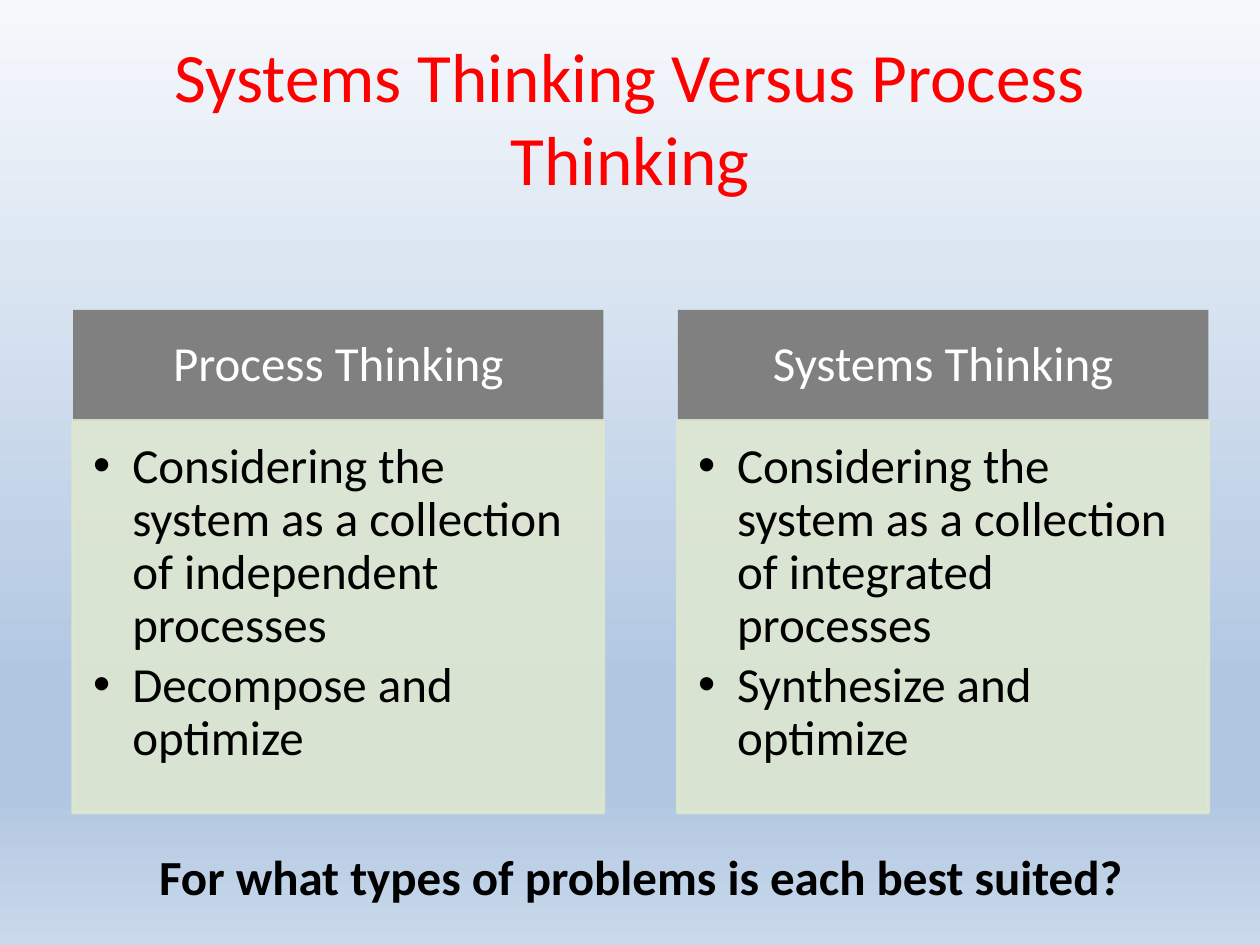
from pptx import Presentation
from pptx.dml.color import RGBColor
from pptx.enum.shapes import MSO_SHAPE
from pptx.enum.text import MSO_ANCHOR, MSO_AUTO_SIZE, PP_ALIGN
from pptx.oxml.ns import qn
from pptx.util import Inches, Pt
from lxml.etree import SubElement

COLORS = {"title": "FF0000", "header": "808080", "header_text": "FFFFFF",
          "body": "DEE7D1", "text": "000000"}
BACKGROUND = [(0, "F6F9FC"), (74, "B0C6E1"), (83, "B0C6E1"), (100, "CAD9EB")]
FONT = "Calibri"
PANELS = [
    ("Process Thinking",
     ["Considering the system as a collection of independent processes",
      "Decompose and optimize"]),
    ("Systems Thinking",
     ["Considering the system as a collection of integrated processes",
      "Synthesize and optimize"]),
]
LEFT, TOP, STEP, WIDTH = 0.58, 2.46, 4.8, 4.21
HEADER_H, BODY_H = 0.88, 3.11


def rgb(name):
    """Return the named colour."""
    return RGBColor.from_string(COLORS[name])


def style(p, size, color, align=PP_ALIGN.CENTER, bold=False):
    """Align a paragraph and format its runs."""
    p.alignment = align
    for r in p.runs:
        r.font.name, r.font.size, r.font.bold = FONT, Pt(size), bold
        r.font.color.rgb = rgb(color)


def set_insets(tf, left, top, right, bottom):
    """Set the text margins in inches."""
    tf.margin_left, tf.margin_top = Inches(left), Inches(top)
    tf.margin_right, tf.margin_bottom = Inches(right), Inches(bottom)


def set_bullet(p, indent):
    """Give a paragraph a hanging round bullet."""
    pPr = p._p.get_or_add_pPr()
    pPr.set("marL", str(Inches(indent)))
    pPr.set("indent", str(-Inches(indent)))
    SubElement(pPr, qn("a:buFont")).set("typeface", "Arial")
    SubElement(pPr, qn("a:buChar")).set("char", "•")


def set_translucent(fill, percent):
    """Set the opacity of a solid fill."""
    color = fill._xPr.find(qn("a:solidFill"))[0]
    SubElement(color, qn("a:alpha")).set("val", str(percent * 1000))


def set_background(s):
    """Fill the slide with a vertical gradient."""
    fill = s.background.fill
    fill.gradient()
    fill.gradient_angle = 270
    stops = fill._xPr.find(qn("a:gradFill")).find(qn("a:gsLst"))
    for stop in list(stops):
        stops.remove(stop)
    for pos, color in BACKGROUND:
        stop = SubElement(stops, qn("a:gs"), pos=str(pos * 1000))
        SubElement(stop, qn("a:srgbClr"), val=color)


def add_title(s, text, box):
    """Place and format the title placeholder."""
    sp = s.shapes.title
    sp.left, sp.top, sp.width, sp.height = map(Inches, box)
    tf = sp.text_frame
    tf.text = text
    tf.auto_size = MSO_AUTO_SIZE.NONE
    tf.vertical_anchor = MSO_ANCHOR.MIDDLE
    style(tf.paragraphs[0], 39.6, "title")


def add_block(s, box, color):
    """Add a plain filled rectangle."""
    sp = s.shapes.add_shape(MSO_SHAPE.RECTANGLE, *map(Inches, box))
    sp.shadow.inherit = False
    sp.fill.solid()
    sp.fill.fore_color.rgb = rgb(color)
    sp.line.fill.background()
    sp.text_frame.word_wrap = True
    return sp


def add_panel(s, heading, points, left, top, width):
    """Add a header bar with a bulleted body below it."""
    header = add_block(s, (left, top, width, HEADER_H), "header")
    tf = header.text_frame
    set_insets(tf, 0.22, 0.12, 0.22, 0.12)
    tf.vertical_anchor = MSO_ANCHOR.MIDDLE
    tf.text = heading
    tf.paragraphs[0].line_spacing = 0.9
    style(tf.paragraphs[0], 28, "header_text")

    body = add_block(s, (left, top + HEADER_H, width, BODY_H), "body")
    body.line.color.rgb = rgb("body")
    body.line.width = Pt(2)
    set_translucent(body.fill, 90)
    set_translucent(body.line.fill, 90)
    tf = body.text_frame
    set_insets(tf, 0.16, 0.16, 0.22, 0.24)
    tf.vertical_anchor = MSO_ANCHOR.TOP
    tf.text = "\n".join(points)
    for p in tf.paragraphs:
        p.line_spacing = 0.9
        p.space_after = Pt(4.2)
        style(p, 28, "text", PP_ALIGN.LEFT)
        set_bullet(p, 0.31)


def add_question(s, text, box):
    """Add the closing question in bold."""
    tf = s.shapes.add_textbox(*map(Inches, box)).text_frame
    tf.word_wrap = True
    tf.auto_size = MSO_AUTO_SIZE.SHAPE_TO_FIT_TEXT
    tf.text = text
    style(tf.paragraphs[0], 28, "text", bold=True)


def main():
    """Build and save the slide."""
    prs = Presentation()
    prs.slide_width, prs.slide_height = Inches(10), Inches(7.5)
    s = prs.slides.add_slide(prs.slide_layouts[5])
    set_background(s)
    add_title(s, "Systems Thinking Versus Process Thinking", (0.5, 0.3, 9, 1.25))
    for i, (heading, points) in enumerate(PANELS):
        add_panel(s, heading, points, LEFT + i * STEP, TOP, WIDTH)
    add_question(s, "For what types of problems is each best suited?",
                 (1, 6.67, 8.17, 0.57))
    prs.save("out.pptx")


if __name__ == "__main__":
    main()
